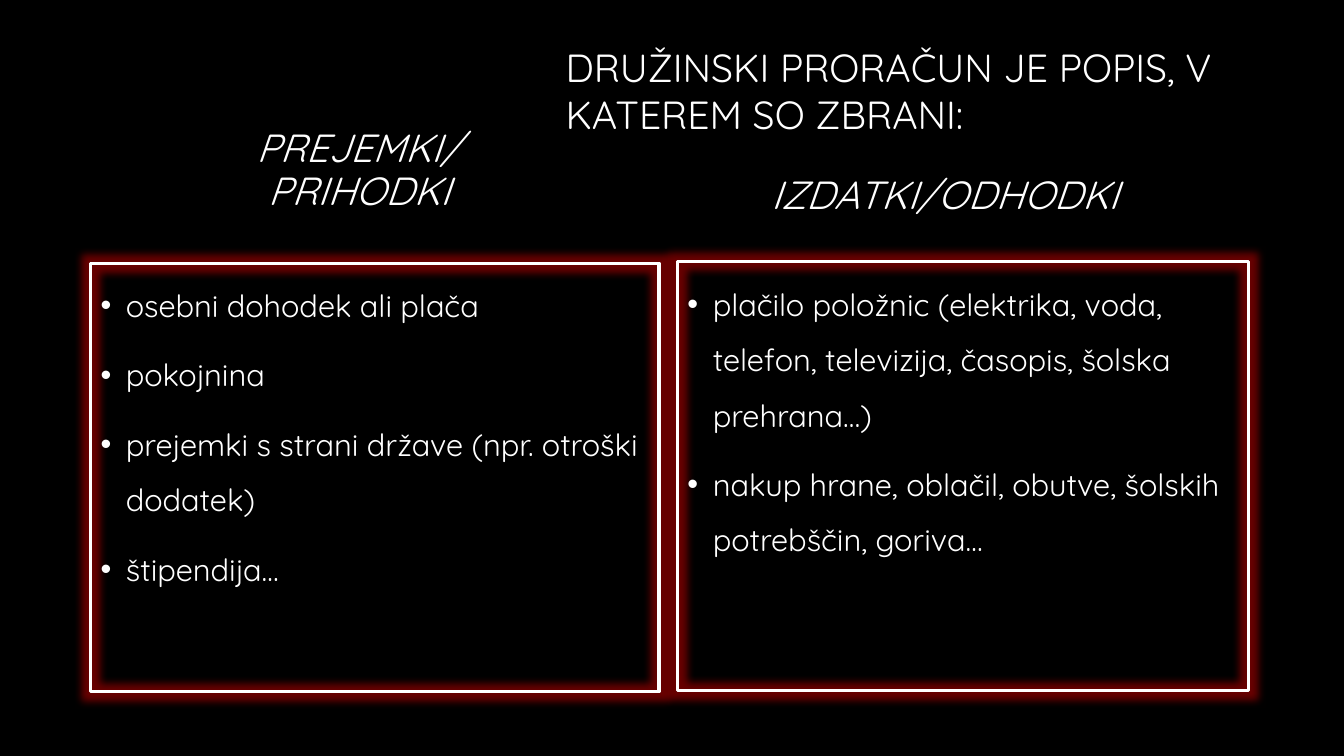
from dataclasses import dataclass

from lxml import etree
from pptx import Presentation
from pptx import util as u
from pptx.dml import color
from pptx.enum import text
from pptx.oxml import ns


@dataclass
class Theme:
    font: str = "Quicksand"
    background: color.RGBColor = color.RGBColor(0, 0, 0)
    foreground: color.RGBColor = color.RGBColor(255, 255, 255)
    glow: str = "FF0000"
    heading_size: int = 28
    list_size: int = 22


theme = Theme()


def place(shape, left, top, width, height, anchor):
    shape.left, shape.top = u.Cm(left), u.Cm(top)
    shape.width, shape.height = u.Cm(width), u.Cm(height)
    frame = shape.text_frame
    frame.word_wrap = True
    frame.auto_size = text.MSO_AUTO_SIZE.NONE
    frame.vertical_anchor = anchor


def style(paragraph, size, alignment, line_spacing, italic=False):
    paragraph.alignment = alignment
    paragraph.line_spacing = line_spacing
    paragraph.space_before = u.Pt(0)
    for run in paragraph.runs:
        run.font.name = theme.font
        run.font.size = u.Pt(size)
        run.font.bold = False
        run.font.italic = italic
        run.font.color.rgb = theme.foreground


presentation = Presentation()
presentation.slide_width = u.Cm(33.87)
presentation.slide_height = u.Cm(19.05)
slide = presentation.slides.add_slide(presentation.slide_layouts.get_by_name("Comparison"))
slide.background.fill.solid()
slide.background.fill.fore_color.rgb = theme.background
title, *bodies = slide.placeholders

place(title, 14, 0.97, 17.48, 2.64, text.MSO_ANCHOR.TOP)
title.text_frame.text = "DRUŽINSKI PRORAČUN JE POPIS, V KATEREM SO ZBRANI:"
style(title.text_frame.paragraphs[0], theme.heading_size, text.PP_ALIGN.LEFT, 1.0)

columns = [
    ("PREJEMKI/PRIHODKI", (4.09, 4.11, 9.91, 1.4), (2.28, 6.63, 14.33, 10.8), [
        "osebni dohodek ali plača",
        "pokojnina",
        "prejemki s strani države (npr. otroški dodatek)",
        "štipendija…",
    ]),
    ("IZDATKI/ODHODKI", (18.85, 4.11, 9.91, 1.5), (17.07, 6.6, 14.4, 10.8), [
        "plačilo položnic (elektrika, voda, telefon, televizija, časopis, šolska prehrana…)",
        "nakup hrane, oblačil, obutve, šolskih potrebščin, goriva…",
    ]),
]

for (name, heading_box, list_box, items), heading, panel in zip(columns, bodies[::2], bodies[1::2]):
    place(heading, *heading_box, text.MSO_ANCHOR.BOTTOM)
    heading.text_frame.text = name
    style(heading.text_frame.paragraphs[0], theme.heading_size, text.PP_ALIGN.CENTER, 0.9, True)

    place(panel, *list_box, text.MSO_ANCHOR.TOP)
    panel.fill.background()
    panel.line.color.rgb = theme.foreground
    panel.line.width = u.Pt(2.25)
    effects = etree.SubElement(panel.element.spPr, ns.qn("a:effectLst"))
    glow = etree.SubElement(effects, ns.qn("a:glow"), rad=str(u.Pt(11)))
    glow_color = etree.SubElement(glow, ns.qn("a:srgbClr"), val=theme.glow)
    etree.SubElement(glow_color, ns.qn("a:alpha"), val="40000")

    panel.text_frame.text = "\n".join(items)
    for index, paragraph in enumerate(panel.text_frame.paragraphs):
        properties = paragraph._p.get_or_add_pPr()
        properties.set("marL", str(u.Cm(0.64)))
        properties.set("indent", str(u.Cm(-0.64)))
        etree.SubElement(properties, ns.qn("a:buFont"), typeface="Arial")
        etree.SubElement(properties, ns.qn("a:buChar"), char="•")
        style(paragraph, theme.list_size, text.PP_ALIGN.LEFT, 1.5)
        if index:
            paragraph.space_before = u.Pt(10)

presentation.save("out.pptx")
